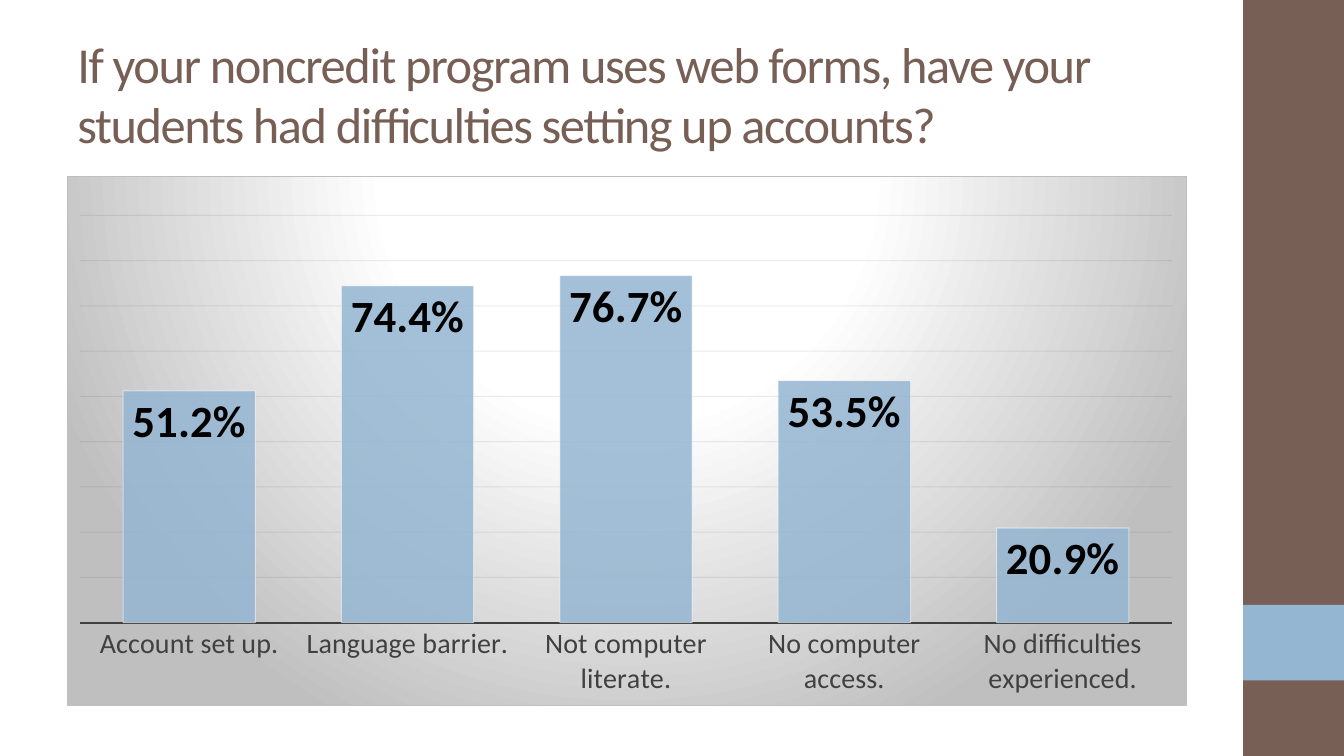
from lxml import etree
from pptx import Presentation
from pptx import util as u
from pptx.chart.data import CategoryChartData
from pptx.dml.color import RGBColor
from pptx.enum import chart as charts, shapes, text
from pptx.oxml import parse_xml
from pptx.oxml.ns import nsdecls, qn

BROWN = RGBColor(0x77, 0x5F, 0x55)
BLUE = RGBColor(0x94, 0xB6, 0xD2)
WHITE = RGBColor(0xFF, 0xFF, 0xFF)
BLACK = RGBColor(0, 0, 0)
SILVER = RGBColor(0xBF, 0xBF, 0xBF)
CHARCOAL = RGBColor(0x40, 0x40, 0x40)
GRID = RGBColor(0x0D, 0x0D, 0x0D)

DIFFICULTIES = {
    "Account set up.": 0.512,
    "Language barrier.": 0.744,
    "Not computer literate.": 0.767,
    "No computer access.": 0.535,
    "No difficulties experienced.": 0.209,
}


class SlideBuilder:
    font_name = "Calibri"
    columns, rows = 40, 30

    def __init__(self, presentation):
        self.column = presentation.slide_width / self.columns
        self.row = presentation.slide_height / self.rows
        self.slide = presentation.slides.add_slide(presentation.slide_layouts[5])

    def box(self, left, top, width, height):
        return (round(left * self.column), round(top * self.row),
                round(width * self.column), round(height * self.row))

    def style(self, font, size, color, bold=False):
        font.name = self.font_name
        font.size = u.Pt(size)
        font.color.rgb = color
        font.bold = bold

    def fade(self, fill, percent):
        for color in fill._xPr.iter(qn("a:srgbClr")):
            etree.SubElement(color, qn("a:alpha"), val=str(percent * 1000))

    def outline(self, line, color, width, opacity=100):
        line.color.rgb = color
        line.width = u.Pt(width)
        if opacity < 100:
            self.fade(line.fill, opacity)

    def band(self, area, color):
        shape = self.slide.shapes.add_shape(shapes.MSO_SHAPE.RECTANGLE, *self.box(*area))
        shape.shadow.inherit = False
        shape.fill.solid()
        shape.fill.fore_color.rgb = color
        shape.line.fill.background()

    def title(self, area, words):
        shape = self.slide.shapes.title
        shape.left, shape.top, shape.width, shape.height = self.box(*area)
        frame = shape.text_frame
        frame.word_wrap = True
        frame.auto_size = text.MSO_AUTO_SIZE.NONE
        frame.vertical_anchor = text.MSO_ANCHOR.MIDDLE
        paragraph = frame.paragraphs[0]
        paragraph.alignment = text.PP_ALIGN.LEFT
        run = paragraph.add_run()
        run.text = words
        self.style(run.font, 36, BROWN)
        run.font._element.set("spc", "-100")

    def column_chart(self, area, values):
        data = CategoryChartData(number_format="0.0%")
        data.categories = list(values)
        data.add_series("Series 1", list(values.values()))
        chart = self.slide.shapes.add_chart(
            charts.XL_CHART_TYPE.COLUMN_CLUSTERED, *self.box(*area), data).chart
        chart.has_legend = False
        chart.has_title = False
        self.style(chart.font, 10, BLACK)
        self.axes(chart)
        self.bars(chart.plots[0])
        self.backdrop(chart)
        self.plot_area(chart, 0.011, 0.073, 0.976, 0.771)

    def axes(self, chart):
        categories = chart.category_axis
        categories.major_tick_mark = charts.XL_TICK_MARK.NONE
        self.style(categories.tick_labels.font, 20, CHARCOAL)
        self.outline(categories.format.line, CHARCOAL, 1.5)
        values = chart.value_axis
        values.minimum_scale, values.maximum_scale, values.major_unit = 0, 0.9, 0.1
        values.has_major_gridlines = True
        values.visible = False
        self.outline(values.major_gridlines.format.line, GRID, 0.75, 7)

    def bars(self, plot):
        plot.gap_width = 65
        plot.vary_by_categories = False
        series = plot.series[0]
        series.format.fill.solid()
        series.format.fill.fore_color.rgb = BLUE
        self.fade(series.format.fill, 85)
        self.outline(series.format.line, WHITE, 0.75, 50)
        labels = series.data_labels
        labels.show_value = True
        labels.position = charts.XL_LABEL_POSITION.INSIDE_END
        labels.number_format = "0.0%"
        labels.number_format_is_linked = False
        self.style(labels.font, 32, BLACK, bold=True)

    def backdrop(self, chart):
        stops = "".join(
            f'<a:gs pos="{position * 1000}"><a:srgbClr val="{color}"/></a:gs>'
            for position, color in ((0, WHITE), (39, WHITE), (100, SILVER)))
        chart._chartSpace.find(qn("c:chart")).addnext(parse_xml(
            f'<c:spPr {nsdecls("c", "a")}><a:gradFill><a:gsLst>{stops}</a:gsLst>'
            '<a:path path="circle"><a:fillToRect l="50000" t="-80000" r="50000" b="180000"/>'
            f'</a:path></a:gradFill><a:ln w="{u.Pt(0.75)}"><a:solidFill>'
            f'<a:srgbClr val="{SILVER}"/></a:solidFill></a:ln></c:spPr>'))

    def plot_area(self, chart, left, top, width, height):
        area = chart._chartSpace.find(f'{qn("c:chart")}/{qn("c:plotArea")}')
        for layout in area.findall(qn("c:layout")):
            area.remove(layout)
        settings = {"layoutTarget": "inner", "xMode": "edge", "yMode": "edge",
                    "x": left, "y": top, "w": width, "h": height}
        children = "".join(f'<c:{name} val="{value}"/>' for name, value in settings.items())
        area.insert(0, parse_xml(
            f'<c:layout {nsdecls("c")}><c:manualLayout>{children}</c:manualLayout></c:layout>'))


def main():
    presentation = Presentation()
    presentation.slide_width = u.Inches(13.33)
    presentation.slide_height = u.Inches(7.5)
    builder = SlideBuilder(presentation)
    builder.band((37, 0, 3, 30), BROWN)
    builder.band((37, 24, 3, 3), BLUE)
    builder.title((2, 1.2, 33.33, 5),
                  "If your noncredit program uses web forms, have your "
                  "students had difficulties setting up accounts?")
    builder.column_chart((2, 7, 33.33, 21), DIFFICULTIES)
    presentation.save("out.pptx")


if __name__ == "__main__":
    main()
